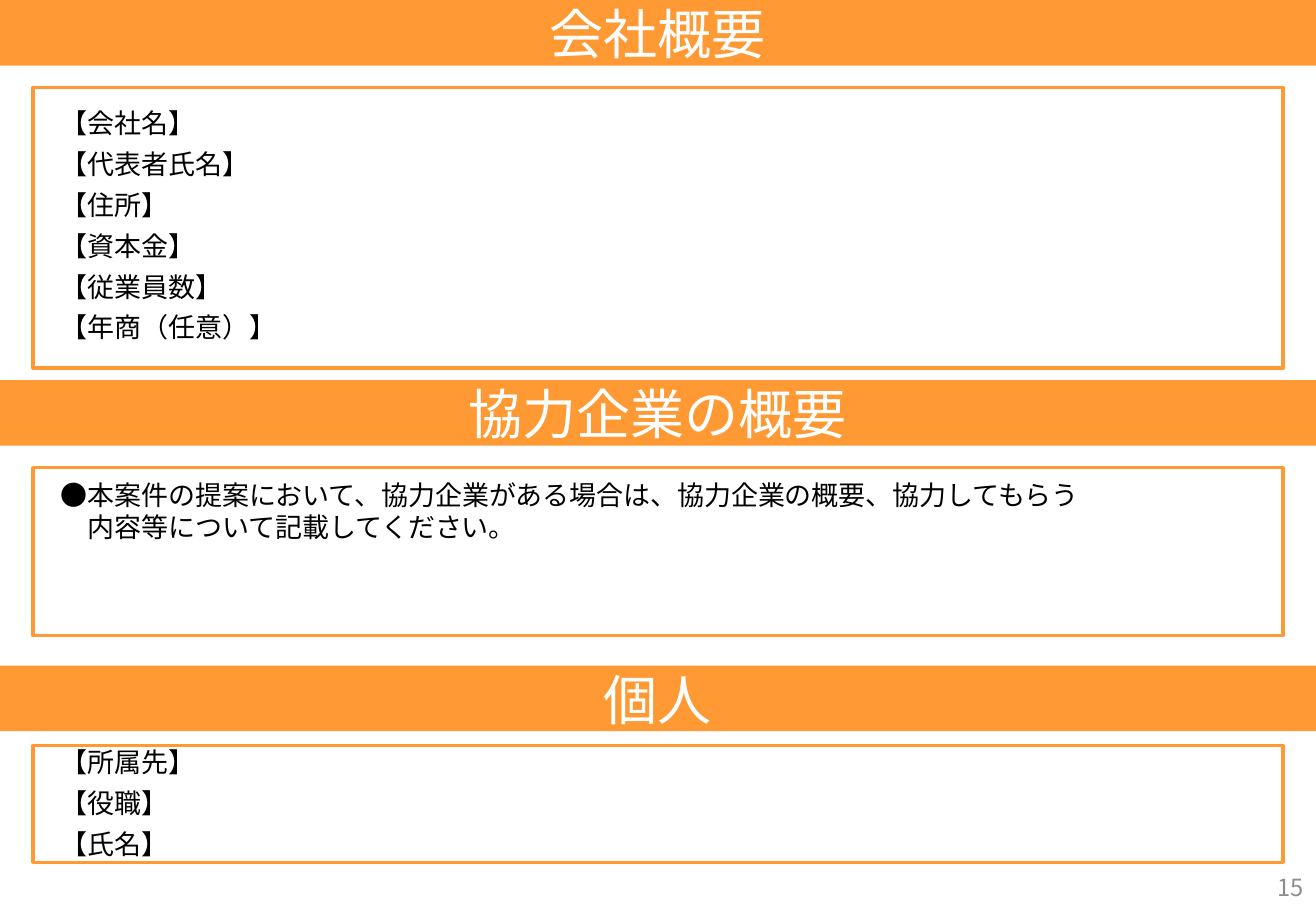
import dataclasses
import typing
import pptx
import pptx.dml.color
import pptx.enum.shapes
import pptx.enum.text
import pptx.oxml.ns
import pptx.util

Inches = pptx.util.Inches
Pt = pptx.util.Pt
RGBColor = pptx.dml.color.RGBColor
ALIGN = pptx.enum.text.PP_ALIGN
ANCHOR = pptx.enum.text.MSO_ANCHOR

ORANGE = RGBColor(0xFF, 0x99, 0x33)
WHITE = RGBColor(0xFF, 0xFF, 0xFF)
BLACK = RGBColor(0, 0, 0)
GRAY = RGBColor(0x8C, 0x8C, 0x8C)
FONT = "Noto Sans CJK JP"
WIDE, HIGH = 10.83, 7.5
BAND = 0.54
EDGE = 0.27
INSET = 0.23


@dataclasses.dataclass
class Part:
    head: str
    top: float
    box: float
    tall: float
    pad: float
    lines: list[str]
    hang: int = 0


PARTS = [
    Part("会社概要", 0, 0.72, 2.31, 0.16,
         ["【会社名】", "【代表者氏名】", "【住所】", "【資本金】", "【従業員数】", "【年商（任意）】"]),
    Part("協力企業の概要", 3.13, 3.85, 1.38, 0.09,
         ["●本案件の提案において、協力企業がある場合は、協力企業の概要、協力してもらう"
          "\v内容等について記載してください。"], 16),
    Part("個人", 5.48, 6.14, 0.96, 0, ["【所属先】", "【役職】", "【氏名】"]),
]


def apply(item: typing.Any, look: dict[str, typing.Any]) -> None:
    for name, value in look.items():
        setattr(item, name, value)


def place(shape: typing.Any, left: float, top: float, width: float, height: float) -> None:
    apply(shape, {"left": Inches(left), "top": Inches(top),
                  "width": Inches(width), "height": Inches(height)})


def write(shape: typing.Any, lines: list[str], size: int, color: RGBColor,
          align: typing.Any, anchor: typing.Any, left: float = 0, top: float = 0,
          right: float = 0, hang: int = 0) -> None:
    frame = shape.text_frame
    apply(frame, {"word_wrap": True, "auto_size": pptx.enum.text.MSO_AUTO_SIZE.NONE,
                  "vertical_anchor": anchor, "margin_left": Inches(left),
                  "margin_top": Inches(top), "margin_right": Inches(right),
                  "margin_bottom": 0})
    frame.text = "\n".join(lines)
    for index, para in enumerate(frame.paragraphs):
        apply(para, {"alignment": align, "space_before": Pt(5 if index else 0)})
        if hang:
            props = para._p.get_or_add_pPr()
            props.set("marL", str(Pt(hang)))
            props.set("indent", str(-Pt(hang)))
        for run in para.runs:
            apply(run.font, {"name": FONT, "size": Pt(size), "bold": False})
            run.font.color.rgb = color
            props = run._r.get_or_add_rPr()
            props.set("lang", "ja-JP")
            east = props.makeelement(pptx.oxml.ns.qn("a:ea"), {"typeface": FONT})
            props.find(pptx.oxml.ns.qn("a:latin")).addnext(east)


def block(slide: typing.Any) -> typing.Any:
    shape = slide.shapes.add_shape(pptx.enum.shapes.MSO_SHAPE.RECTANGLE, 0, 0, 0, 0)
    shape.shadow.inherit = False
    return shape


def draw(slide: typing.Any, part: Part, band: typing.Any) -> None:
    place(band, 0, part.top, WIDE, BAND)
    band.fill.solid()
    band.fill.fore_color.rgb = ORANGE
    band.line.fill.background()
    write(band, [part.head], 32, WHITE, ALIGN.CENTER, ANCHOR.MIDDLE)

    box = block(slide)
    place(box, EDGE, part.box, WIDE - 2 * EDGE, part.tall)
    box.fill.background()
    box.line.color.rgb = ORANGE
    box.line.width = Pt(2)
    write(box, part.lines, 16, BLACK, ALIGN.LEFT, ANCHOR.TOP,
          left=INSET, top=part.pad, hang=part.hang)


def main() -> None:
    deck = pptx.Presentation()
    apply(deck, {"slide_width": Inches(WIDE), "slide_height": Inches(HIGH)})
    slide = deck.slides.add_slide(deck.slide_layouts[5])
    for index, part in enumerate(PARTS):
        draw(slide, part, block(slide) if index else slide.shapes.title)
    page = slide.shapes.add_textbox(0, 0, 0, 0)
    place(page, 8.4, 7.1, 2.43, 0.4)
    write(page, ["15"], 14, GRAY, ALIGN.RIGHT, ANCHOR.MIDDLE, right=0.1)
    deck.save("out.pptx")


if __name__ == "__main__":
    main()
